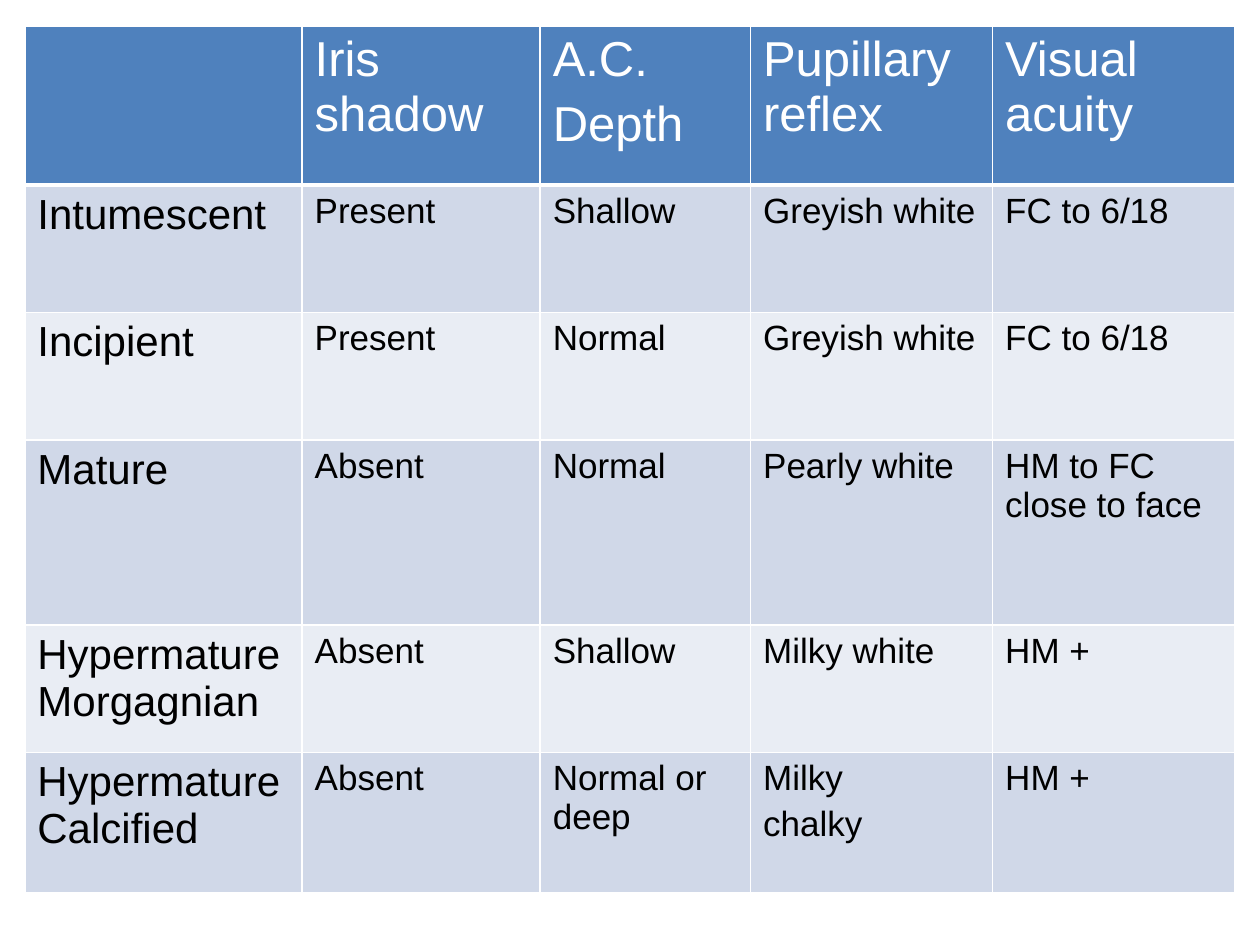
from dataclasses import dataclass

from lxml.etree import SubElement
from pptx import Presentation
from pptx.dml.color import RGBColor
from pptx.oxml.ns import qn
from pptx.util import Cm, Pt


@dataclass(frozen=True)
class Theme:
    font: str = "Arial"
    header_fill: str = "4F81BD"
    bands: tuple = ("D0D8E8", "E9EDF4")
    header_text: str = "FFFFFF"
    body_text: str = "000000"
    border: str = "FFFFFF"
    header_size: int = 28
    label_size: int = 24
    body_size: int = 20
    thin: int = 1
    thick: int = 3


COL_WIDTHS = (5.59, 4.8, 4.24, 4.88, 4.88)
ROW_HEIGHTS = (3.2, 2.57, 2.57, 3.73, 2.57, 2.82)
CATARACT_STAGES = (
    ("", "Iris shadow", "A.C.\nDepth", "Pupillary reflex", "Visual acuity"),
    ("Intumescent", "Present", "Shallow", "Greyish white", "FC to 6/18"),
    ("Incipient", "Present", "Normal", "Greyish white", "FC to 6/18"),
    ("Mature", "Absent", "Normal", "Pearly white", "HM to FC close to face"),
    ("Hypermature Morgagnian", "Absent", "Shallow", "Milky white", "HM +"),
    ("Hypermature Calcified", "Absent", "Normal or deep", "Milky\nchalky", "HM +"),
)


def write_text(tf, text, *, font, size, color):
    """Write one paragraph per line, with 20% of the type size between them."""
    for i, line in enumerate(text.split("\n")):
        p = tf.add_paragraph() if i else tf.paragraphs[0]
        if i:
            p.space_before = Pt(size * 0.2)
        p.font.size = Pt(size)
        if line:
            r = p.add_run()
            r.text = line
            r.font.name = font
            r.font.size = Pt(size)
            r.font.color.rgb = RGBColor.from_string(color)


def set_borders(cell, color, **widths):
    """Draw cell borders; widths are points keyed by side: L, R, T, B."""
    tcPr = cell._tc.get_or_add_tcPr()
    for side, width in widths.items():
        ln = SubElement(tcPr, qn(f"a:ln{side}"), w=str(Pt(width)))
        fill = SubElement(ln, qn("a:solidFill"))
        SubElement(fill, qn("a:srgbClr"), val=color)


class SlideBuilder:
    def __init__(self, slide, theme):
        self.s = slide
        self.theme = theme

    def table(self, rows, left, top, col_widths, row_heights):
        shape = self.s.shapes.add_table(
            len(rows), len(col_widths), Cm(left), Cm(top),
            Cm(sum(col_widths)), Cm(sum(row_heights)))
        table = shape.table
        for col, width in zip(table.columns, col_widths):
            col.width = Cm(width)
        for row, height in zip(table.rows, row_heights):
            row.height = Cm(height)
        for i, texts in enumerate(rows):
            for j, text in enumerate(texts):
                self.cell(table.cell(i, j), text, i, j)

    def cell(self, cell, text, row, col):
        t = self.theme
        if row == 0:
            fill, color, size = t.header_fill, t.header_text, t.header_size
        else:
            fill, color = t.bands[(row - 1) % 2], t.body_text
            size = t.body_size if col else t.label_size
        set_borders(cell, t.border, L=t.thin, R=t.thin,
                    T=t.thick if row == 1 else t.thin,
                    B=t.thick if row == 0 else t.thin)
        cell.fill.solid()
        cell.fill.fore_color.rgb = RGBColor.from_string(fill)
        write_text(cell.text_frame, text, font=t.font, size=size, color=color)


def main():
    prs = Presentation()
    prs.slide_width, prs.slide_height = Cm(25.4), Cm(19.05)
    s = prs.slides.add_slide(prs.slide_layouts[6])
    builder = SlideBuilder(s, Theme())
    builder.table(CATARACT_STAGES, 0.5, 0.53, COL_WIDTHS, ROW_HEIGHTS)
    prs.save("out.pptx")


if __name__ == "__main__":
    main()
